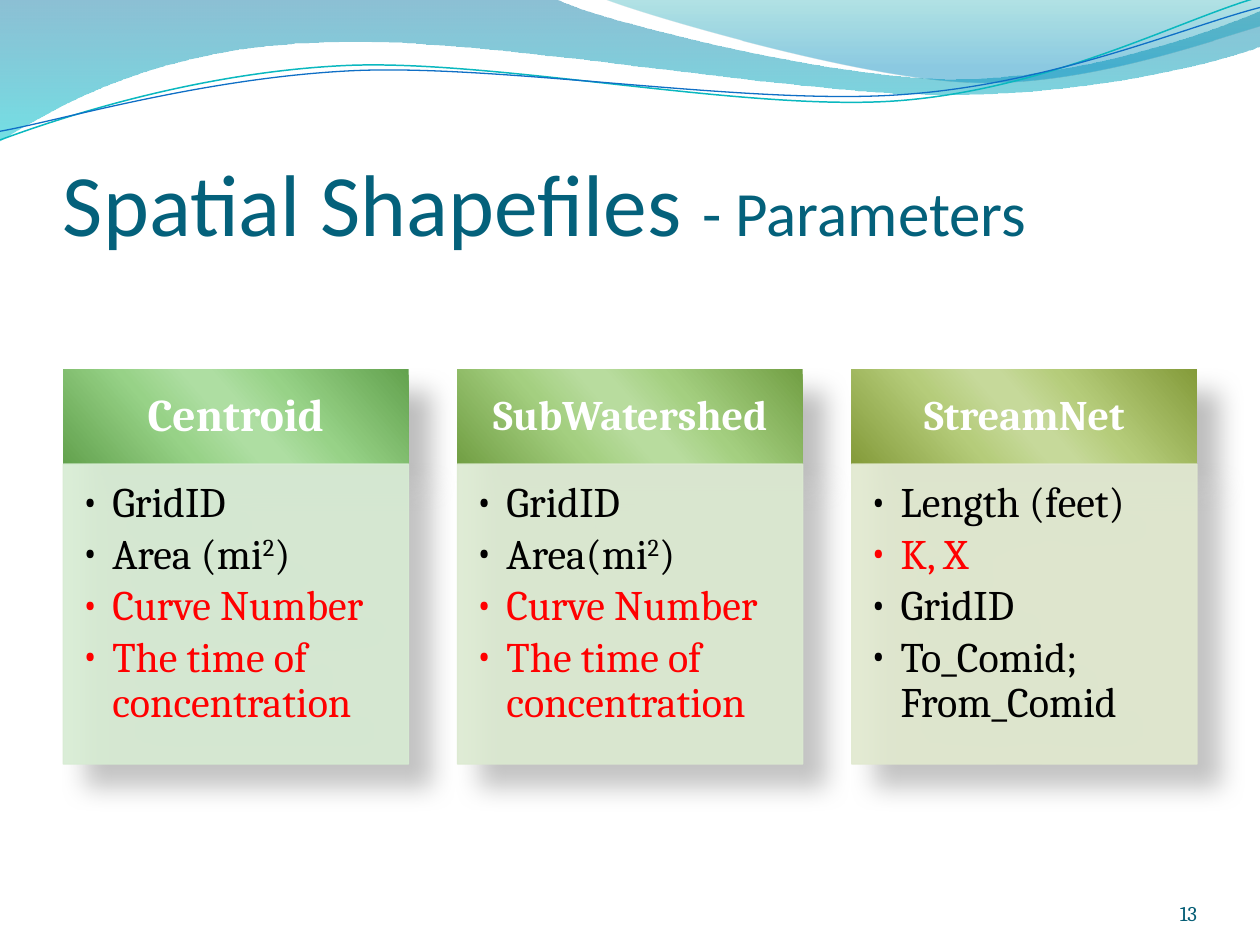
"""Build the slide on spatial shapefile parameters."""
import math

import pptx
import pptx.dml.color
import pptx.enum.shapes
import pptx.enum.text
import pptx.oxml
import pptx.oxml.ns
import pptx.util

Pt = pptx.util.Pt
ALIGN = pptx.enum.text.PP_ALIGN
ANCHOR = pptx.enum.text.MSO_ANCHOR
RECTANGLE = pptx.enum.shapes.MSO_SHAPE.RECTANGLE
BLACK, RED, WHITE = "000000", "FF0000", "FFFFFF"

WAVES = [
    {"outline": [(0, 0), (317, -1), (343, 12, 478, 45, 546, 45), (614, 45, 690, 19, 720, 6),
                 (720.7, 26), (708, 32, 626, 55, 537, 54), (448, 54, 275, 20, 185, 24),
                 (93, 26, 33, 60, -0.7, 81)],
     "stops": [(0, "0074A1", 45), (100, "00C6CF", 55)]},
    {"outline": [(345, -0.7), (366, 8, 491, 45, 554, 47), (618, 50, 692, 23, 720, 15), (720, 0)],
     "stops": [(0, "00A1A9", 30), (80, "008BBF", 45)]},
    {"outline": [(0, 80), (35, 67, 114, 41, 199, 37.4), (284, 34, 427, 64, 513, 57.6),
                 (600, 51, 675, 11, 718.6, -1.4)],
     "line": ("0AB8BF", 0.85)},
    {"outline": [(0, 75), (34, 69, 118, 44, 204, 40.3), (290, 37, 430, 60.5, 516, 54),
                 (602, 48, 678, 15, 720, 4.3)],
     "line": ("0F6FC6", 0.75)},
]
CARDS = [
    {"name": "Centroid", "size": 26, "body": "D7ECD3",
     "shades": ["63A24E", "97D287", "AEDEA2"],
     "items": [("GridID", BLACK), ("Area (mi^2^)", BLACK), ("Curve Number", RED),
               ("The time of concentration", RED)]},
    {"name": "SubWatershed", "size": 24, "body": "DCEAD1",
     "shades": ["729F44", "A4CF80", "B8DC9E"],
     "items": [("GridID", BLACK), ("Area(mi^2^)", BLACK), ("Curve Number", RED),
               ("The time of concentration", RED)]},
    {"name": "StreamNet", "size": 24, "body": "E1E9CF",
     "shades": ["849B3A", "B5CC7A", "C6D99A"],
     "items": [("Length (feet)", BLACK), ("K, X", RED), ("GridID", BLACK),
               ("To_Comid; From_Comid", BLACK)]},
]
LEFT, RIGHT, CARD_LEFT, CARD_WIDTH = 36, 684, 36.2, 197.3
HEADER_TOP, HEADER_HEIGHT, BODY_HEIGHT = 211, 54.2, 171.4
LINE_TILT, LINE_CENTER = 2.7, (359.5, 42)
UNITS = 100


def rgb(value):
    return pptx.dml.color.RGBColor.from_string(value)


def xml(tag, content="", attributes=""):
    namespace = pptx.oxml.ns.nsdecls("a")
    return pptx.oxml.parse_xml(f"<a:{tag} {namespace} {attributes}>{content}</a:{tag}>")


def color_xml(color, opacity):
    return f'<a:srgbClr val="{color}"><a:alpha val="{opacity * 1000}"/></a:srgbClr>'


def apply(target, values):
    for name, value in values.items():
        setattr(target, name, value)


def fill_gradient(shape, stops, angle):
    shape.fill.solid()
    solid = shape._element.spPr.find(pptx.oxml.ns.qn("a:solidFill"))
    entries = "".join(f'<a:gs pos="{position * 1000}">{color_xml(color, opacity)}</a:gs>'
                      for position, color, opacity in stops)
    gradient = xml("gradFill", f'<a:gsLst>{entries}</a:gsLst><a:lin ang="{angle * 60000}" scaled="0"/>')
    solid.getparent().replace(solid, gradient)


def add_shadow(shape):
    effects = shape._element.spPr.find(pptx.oxml.ns.qn("a:effectLst"))
    attributes = (f'blurRad="{Pt(15)}" dist="{Pt(18)}" dir="{45 * 60000}" '
                  'algn="ctr" rotWithShape="0"')
    effects.append(xml("outerShdw", color_xml(BLACK, 26), attributes))


def add_run(paragraph, text, size, color, font="Cambria", bold=False):
    run = paragraph.add_run()
    run.text = text
    apply(run.font, {"size": Pt(size), "name": font, "bold": bold})
    run.font.color.rgb = rgb(color)
    return run


def format_frame(shape, anchor, insets):
    sides = ("margin_left", "margin_top", "margin_right", "margin_bottom")
    values = {side: Pt(inset) for side, inset in zip(sides, insets)}
    apply(shape.text_frame, {"word_wrap": True, "vertical_anchor": anchor, **values})
    return shape.text_frame


def add_text_box(slide, box, insets):
    shape = slide.shapes.add_textbox(*map(Pt, box))
    return format_frame(shape, ANCHOR.BOTTOM, insets).paragraphs[0]


def turn(point, degrees):
    angle = math.radians(degrees)
    x, y = (value - center for value, center in zip(point, LINE_CENTER))
    return (LINE_CENTER[0] + x * math.cos(angle) - y * math.sin(angle),
            LINE_CENTER[1] + x * math.sin(angle) + y * math.cos(angle))


def add_curves(slide, outline, closed, tilt):
    segments = [[tuple(round(value * UNITS) for value in turn(segment[i:i + 2], tilt))
                 for i in range(0, len(segment), 2)] for segment in outline]
    ends = [segment[-1] for segment in segments]
    builder = slide.shapes.build_freeform(*ends[0], scale=Pt(1) / UNITS)
    builder.add_line_segments(ends[1:], close=closed)
    shape = builder.convert_to_shape()
    left, top = (min(values) for values in zip(*ends))
    straight = shape._element.spPr.findall(".//" + pptx.oxml.ns.qn("a:lnTo"))
    for line, segment in zip(straight, segments[1:]):
        if len(segment) == 3:
            points = "".join(f'<a:pt x="{x - left}" y="{y - top}"/>' for x, y in segment)
            line.getparent().replace(line, xml("cubicBezTo", points))
    shape.rotation = -tilt % 360
    return shape


def add_wave(slide, wave):
    closed = "stops" in wave
    shape = add_curves(slide, wave["outline"], closed, 0 if closed else LINE_TILT)
    shape.shadow.inherit = False
    if closed:
        fill_gradient(shape, wave["stops"], 90)
        shape.line.fill.background()
    else:
        color, width = wave["line"]
        shape.fill.background()
        shape.line.color.rgb = rgb(color)
        shape.line.width = Pt(width)


def add_panel(slide, left, top, height):
    shape = slide.shapes.add_shape(RECTANGLE, *map(Pt, (left, top, CARD_WIDTH, height)))
    shape.line.fill.background()
    shape.shadow.inherit = False
    add_shadow(shape)
    return shape


def add_header(slide, card, left):
    shape = add_panel(slide, left, HEADER_TOP, HEADER_HEIGHT)
    dark, middle, light = card["shades"]
    colors = (dark, middle, light, light, middle, dark)
    stops = [(position, color, 100) for position, color in zip((0, 33, 47, 53, 68, 100), colors)]
    fill_gradient(shape, stops, 139)
    paragraph = format_frame(shape, ANCHOR.MIDDLE, (14, 8, 14, 8)).paragraphs[0]
    apply(paragraph, {"alignment": ALIGN.CENTER, "line_spacing": 0.9})
    add_run(paragraph, card["name"], card["size"], WHITE, bold=True)


def add_body(slide, card, left):
    shape = add_panel(slide, left, HEADER_TOP + HEADER_HEIGHT, BODY_HEIGHT)
    shape.fill.solid()
    shape.fill.fore_color.rgb = rgb(card["body"])
    shape.line.color.rgb = rgb(card["body"])
    shape.line.width = Pt(0.75)
    for color in shape._element.spPr.findall(".//" + pptx.oxml.ns.qn("a:solidFill")):
        color[0].append(xml("alpha", attributes='val="90000"'))
    frame = format_frame(shape, ANCHOR.TOP, (10, 10, 13.5, 15))
    for index, (text, color) in enumerate(card["items"]):
        paragraph = frame.add_paragraph() if index else frame.paragraphs[0]
        apply(paragraph, {"alignment": ALIGN.LEFT, "line_spacing": 0.9, "space_after": Pt(3.5)})
        properties = paragraph._p.get_or_add_pPr()
        properties.set("marL", str(Pt(18)))
        properties.set("indent", str(-Pt(18)))
        properties.append(xml("buFont", attributes='typeface="Cambria"'))
        properties.append(xml("buChar", attributes='char="•"'))
        for part, piece in enumerate(text.split("^")):
            run = add_run(paragraph, piece, 24, color)
            if part % 2:
                run.font._element.set("baseline", "30000")


def main():
    presentation = pptx.Presentation()
    apply(presentation, {"slide_width": Pt(720), "slide_height": Pt(540)})
    slide = presentation.slides.add_slide(presentation.slide_layouts[6])
    for wave in WAVES:
        add_wave(slide, wave)
    title = add_text_box(slide, (LEFT, 55.2, RIGHT - LEFT, 90), (0, 3.6, 0, 0))
    for text, size in (("Spatial Shapefiles ", 50), ("- Parameters", 36)):
        add_run(title, text, size, "04617B", "Calibri")
    pitch = (RIGHT - CARD_LEFT - CARD_WIDTH) / (len(CARDS) - 1)
    for index, card in enumerate(CARDS):
        add_header(slide, card, CARD_LEFT + index * pitch)
        add_body(slide, card, CARD_LEFT + index * pitch)
    number = add_text_box(slide, (RIGHT - 60, 500.2, 60, 28.8), (0, 0, 0, 0))
    number.alignment = ALIGN.RIGHT
    add_run(number, "13", 12, "045D75")
    presentation.save("out.pptx")


if __name__ == "__main__":
    main()
